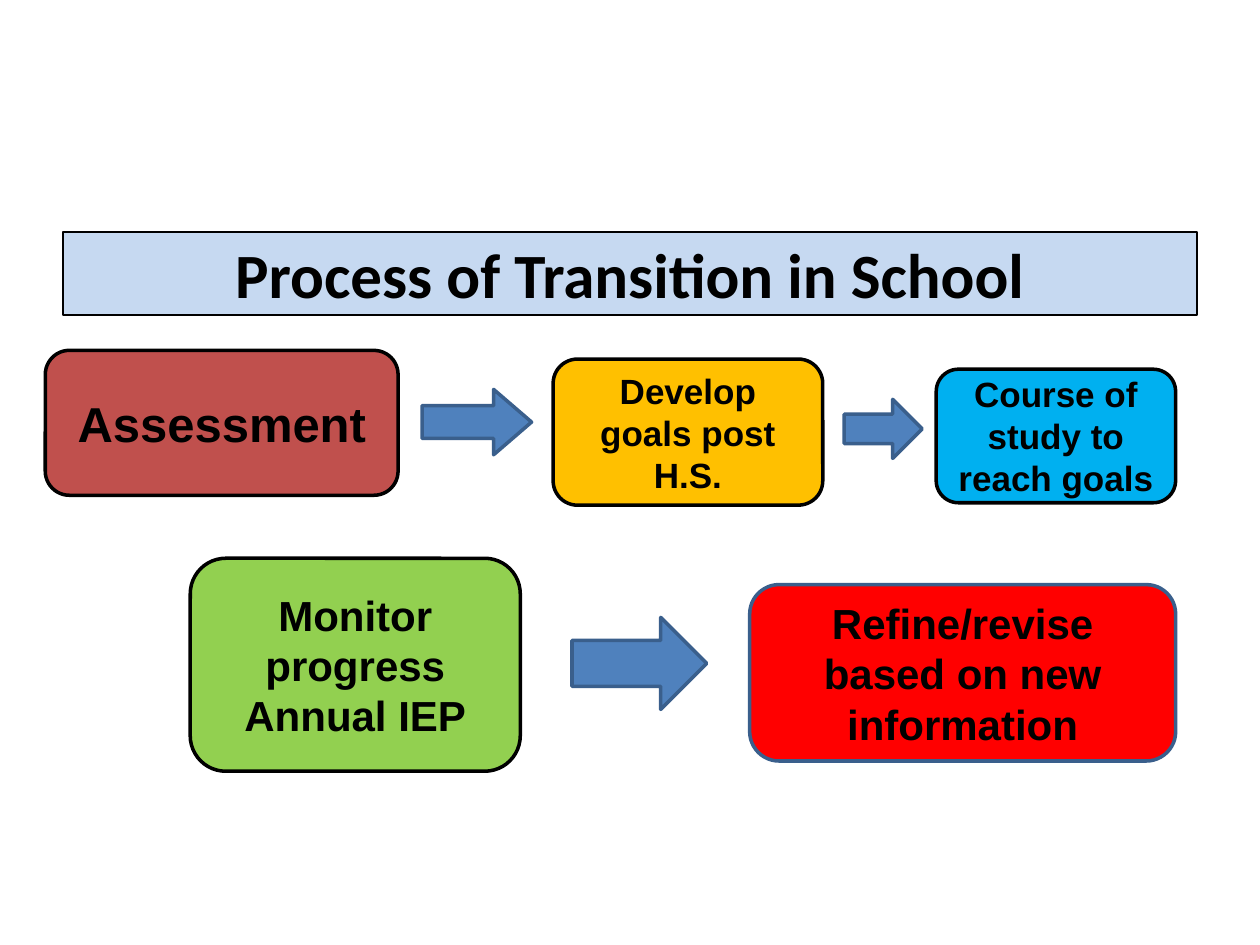
from dataclasses import dataclass

from pptx import Presentation
from pptx.dml.color import RGBColor as RGB
from pptx.enum.shapes import MSO_SHAPE as SHAPE
from pptx.enum.text import MSO_ANCHOR as ANCHOR, MSO_AUTO_SIZE as AUTO, PP_ALIGN as ALIGN
from pptx.util import Pt


@dataclass(frozen=True)
class Theme:
    black: str = "000000"
    title_fill: str = "C6D9F1"
    brick: str = "C0504D"
    amber: str = "FFC000"
    sky: str = "00B0F0"
    green: str = "92D050"
    red: str = "FF0000"
    arrow: str = "4F81BD"
    edge: str = "3A5F8C"
    title_size: int = 36
    large: int = 28
    medium: int = 24
    small: int = 20
    title_font: str = "Calibri"
    step_font: str = "Arial"


class Deck:
    """Holds the theme and the current slide."""

    def __init__(self, theme, width, height):
        self.theme = theme
        self.prs = Presentation()
        self.prs.slide_width, self.prs.slide_height = Pt(width), Pt(height)
        self.slide = self.prs.slides.add_slide(self.prs.slide_layouts[5])

    def paint(self, sp, fill, line, weight):
        sp.fill.solid()
        sp.fill.fore_color.rgb = RGB.from_string(fill)
        sp.line.color.rgb = RGB.from_string(line)
        sp.line.width = Pt(weight)

    def set_text(self, sp, text, size, font):
        tf = sp.text_frame
        tf.text = text
        frame = {"word_wrap": True, "auto_size": AUTO.NONE, "vertical_anchor": ANCHOR.MIDDLE}
        for name, value in frame.items():
            setattr(tf, name, value)
        p = tf.paragraphs[0]
        p.alignment = ALIGN.CENTER
        r = p.runs[0]
        for name, value in {"name": font, "size": Pt(size), "bold": True}.items():
            setattr(r.font, name, value)
        r.font.color.rgb = RGB.from_string(self.theme.black)

    def title(self, text, box):
        t, sp = self.theme, self.slide.shapes.title
        for name, value in zip(("left", "top", "width", "height"), box):
            setattr(sp, name, Pt(value))
        self.paint(sp, t.title_fill, t.black, 0.75)
        self.set_text(sp, text, t.title_size, t.title_font)
        for side in ("left", "top", "right", "bottom"):
            setattr(sp.text_frame, f"margin_{side}", Pt(7.2))

    def shape(self, kind, box, fill, line):
        sp = self.slide.shapes.add_shape(kind, *map(Pt, box))
        sp.shadow.inherit = False
        self.paint(sp, fill, line, 2)
        return sp

    def step(self, text, box, fill, size, line):
        sp = self.shape(SHAPE.ROUNDED_RECTANGLE, box, fill, line)
        self.set_text(sp, text, size, self.theme.step_font)

    def arrow(self, box, head=0.5):
        sp = self.shape(SHAPE.RIGHT_ARROW, box, self.theme.arrow, self.theme.edge)
        sp.adjustments[1] = head


def main():
    t = Theme()
    deck = Deck(t, 720, 540)

    # Title band
    deck.title("Process of Transition in School", (36, 132.5, 648, 47.5))

    # Process steps
    steps = [
        ("Assessment", (25.9, 200.2, 201.6, 82.8), t.brick, t.large, t.black),
        ("Develop goals post H.S.", (316.1, 205.2, 154.1, 83.5), t.amber, t.small, t.black),
        ("Course of study to reach goals", (535, 211, 136.8, 76.3), t.sky, t.small, t.black),
        ("Monitor progress Annual IEP", (108.7, 319, 188.6, 121.7), t.green, t.medium, t.black),
        ("Refine/revise based on new information", (428.4, 334.1, 243.4, 100.8),
         t.red, t.medium, t.edge),
    ]
    for step in steps:
        deck.step(*step)

    # Block arrows between the steps
    deck.arrow((241.2, 222.5, 62.6, 37.4), head=0.58)
    deck.arrow((482.4, 228.2, 44.6, 33.8))
    deck.arrow((326.9, 352.8, 77, 52.6))

    deck.prs.save("out.pptx")


if __name__ == "__main__":
    main()
